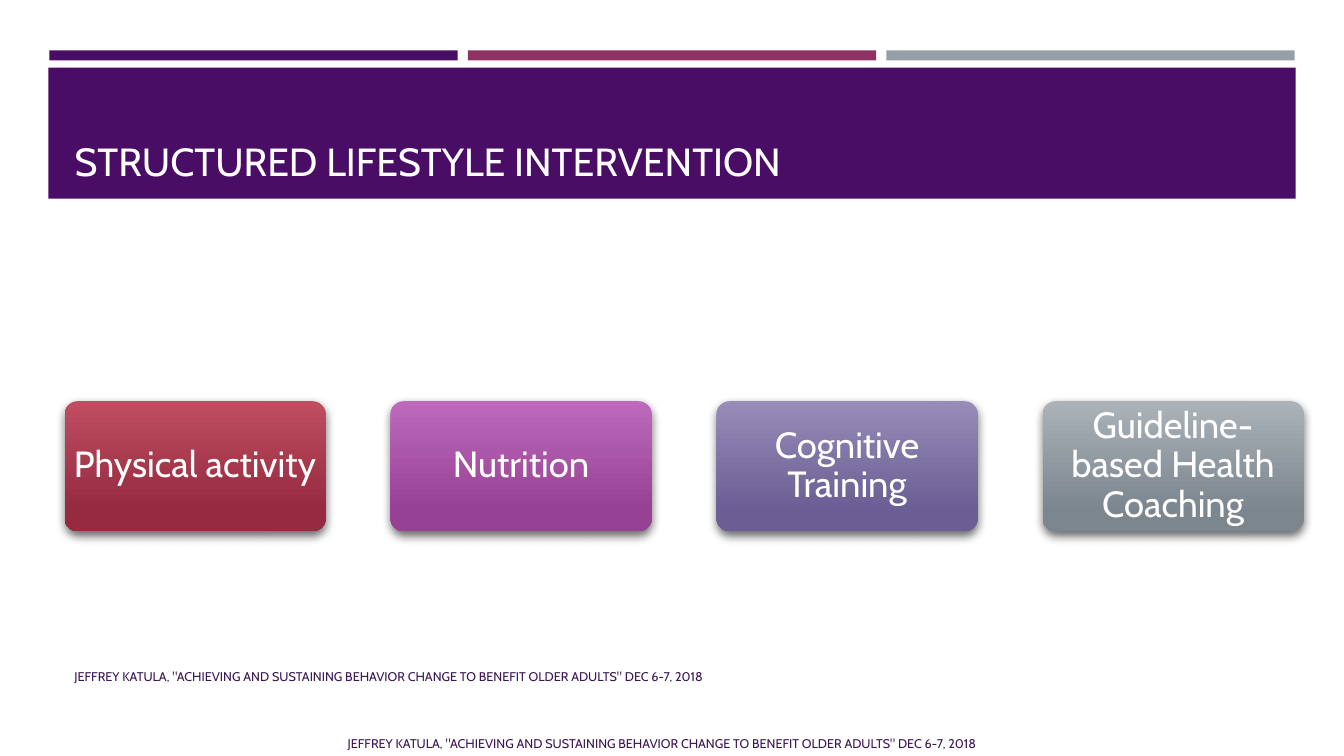
from dataclasses import dataclass

from lxml import etree
from pptx import Presentation
from pptx.dml.color import RGBColor
from pptx.enum import shapes, text
from pptx.oxml import ns
from pptx.util import Inches, Pt

FONT = "Cabin"
COLORS = {
    "purple": "490D66",
    "plum": "903163",
    "grey": "969FA7",
    "white": "FFFFFF",
    "citation": "391553",
    "shadow": "000000",
}
CITATION = ('JEFFREY KATULA, "ACHIEVING AND SUSTAINING BEHAVIOR CHANGE '
            'TO BENEFIT OLDER ADULTS" DEC 6-7, 2018')


@dataclass
class Box:
    left: float
    top: float
    width: float
    height: float

    def lengths(self) -> tuple:
        return tuple(Inches(v) for v in (self.left, self.top, self.width, self.height))


@dataclass
class Component:
    label: str
    top_color: str
    bottom_color: str


@dataclass
class Citation:
    box: Box
    anchor: text.MSO_ANCHOR
    wraps: bool


COMPONENTS = [
    Component("Physical activity", "BF4E61", "962A3F"),
    Component("Nutrition", "BE6ABC", "974195"),
    Component("Cognitive Training", "978CB8", "6B5E94"),
    Component("Guideline-based Health Coaching", "ABB2B8", "7C868F"),
]
CITATIONS = [
    Citation(Box(0.64, 6.51, 7.56, 0.4), text.MSO_ANCHOR.MIDDLE, True),
    Citation(Box(3.35, 7.25, 6.64, 0.25), text.MSO_ANCHOR.TOP, False),
]


def style_paragraph(paragraph, size: float, color: str) -> None:
    paragraph.font.name = FONT
    paragraph.font.size = Pt(size)
    paragraph.font.color.rgb = RGBColor.from_string(color)


def add_band(slide, box: Box, color: str) -> None:
    band = slide.shapes.add_shape(shapes.MSO_SHAPE.RECTANGLE, *box.lengths())
    band.shadow.inherit = False
    band.fill.solid()
    band.fill.fore_color.rgb = RGBColor.from_string(color)
    band.line.fill.background()


def add_drop_shadow(shape) -> None:
    shape.shadow.inherit = False
    effects = shape._element.spPr.find(ns.qn("a:effectLst"))
    shadow = etree.SubElement(
        effects, ns.qn("a:outerShdw"), blurRad=str(Pt(7)), dist=str(Pt(3)),
        dir=str(84 * 60000), algn="ctr", rotWithShape="0")
    color = etree.SubElement(shadow, ns.qn("a:srgbClr"), val=COLORS["shadow"])
    etree.SubElement(color, ns.qn("a:alpha"), val="60000")


def add_component(slide, component: Component, box: Box) -> None:
    card = slide.shapes.add_shape(shapes.MSO_SHAPE.ROUNDED_RECTANGLE, *box.lengths())
    card.adjustments[0] = 0.1
    card.line.fill.background()
    card.fill.gradient()
    card.fill.gradient_angle = 270
    stops = zip(card.fill.gradient_stops, (0, 0.84),
                (component.top_color, component.bottom_color))
    for stop, position, color in stops:
        stop.position = position
        stop.color.rgb = RGBColor.from_string(color)
    add_drop_shadow(card)

    frame = card.text_frame
    frame.word_wrap = True
    frame.vertical_anchor = text.MSO_ANCHOR.MIDDLE
    frame.margin_left = frame.margin_right = Inches(0.04)
    frame.margin_top = frame.margin_bottom = Inches(0.04)
    paragraph = frame.paragraphs[0]
    paragraph.text = component.label
    paragraph.alignment = text.PP_ALIGN.CENTER
    paragraph.line_spacing = 0.9
    style_paragraph(paragraph, 26, COLORS["white"])


def add_title(slide, title: str, box: Box) -> None:
    shape = slide.shapes.title
    shape.left, shape.top, shape.width, shape.height = box.lengths()
    frame = shape.text_frame
    frame.text = title
    frame.auto_size = text.MSO_AUTO_SIZE.NONE
    frame.vertical_anchor = text.MSO_ANCHOR.BOTTOM
    paragraph = frame.paragraphs[0]
    paragraph.alignment = text.PP_ALIGN.LEFT
    style_paragraph(paragraph, 28, COLORS["white"])
    # Bring the title in front of the bands
    slide.shapes._spTree.append(shape._element)


def add_citation(slide, citation: Citation) -> None:
    frame = slide.shapes.add_textbox(*citation.box.lengths()).text_frame
    frame.word_wrap = citation.wraps
    frame.vertical_anchor = citation.anchor
    if not citation.wraps:
        frame.auto_size = text.MSO_AUTO_SIZE.SHAPE_TO_FIT_TEXT
    frame.text = CITATION
    style_paragraph(frame.paragraphs[0], 9, COLORS["citation"])


def main() -> None:
    presentation = Presentation()
    presentation.slide_width = Inches(13.33)
    presentation.slide_height = Inches(7.5)
    slide = presentation.slides.add_slide(presentation.slide_layouts[5])

    for index, color in enumerate(("purple", "plum", "grey")):
        add_band(slide, Box(0.49 + index * 4.15, 0.5, 4.05, 0.1), COLORS[color])
    add_band(slide, Box(0.48, 0.67, 12.37, 1.3), COLORS["purple"])
    add_title(slide, "STRUCTURED LIFESTYLE INTERVENTION", Box(0.64, 0.77, 12.06, 1.11))

    for index, component in enumerate(COMPONENTS):
        add_component(slide, component, Box(0.64 + index * 9.7 / 3, 3.98, 2.59, 1.29))
    for citation in CITATIONS:
        add_citation(slide, citation)

    presentation.save("out.pptx")


if __name__ == "__main__":
    main()
